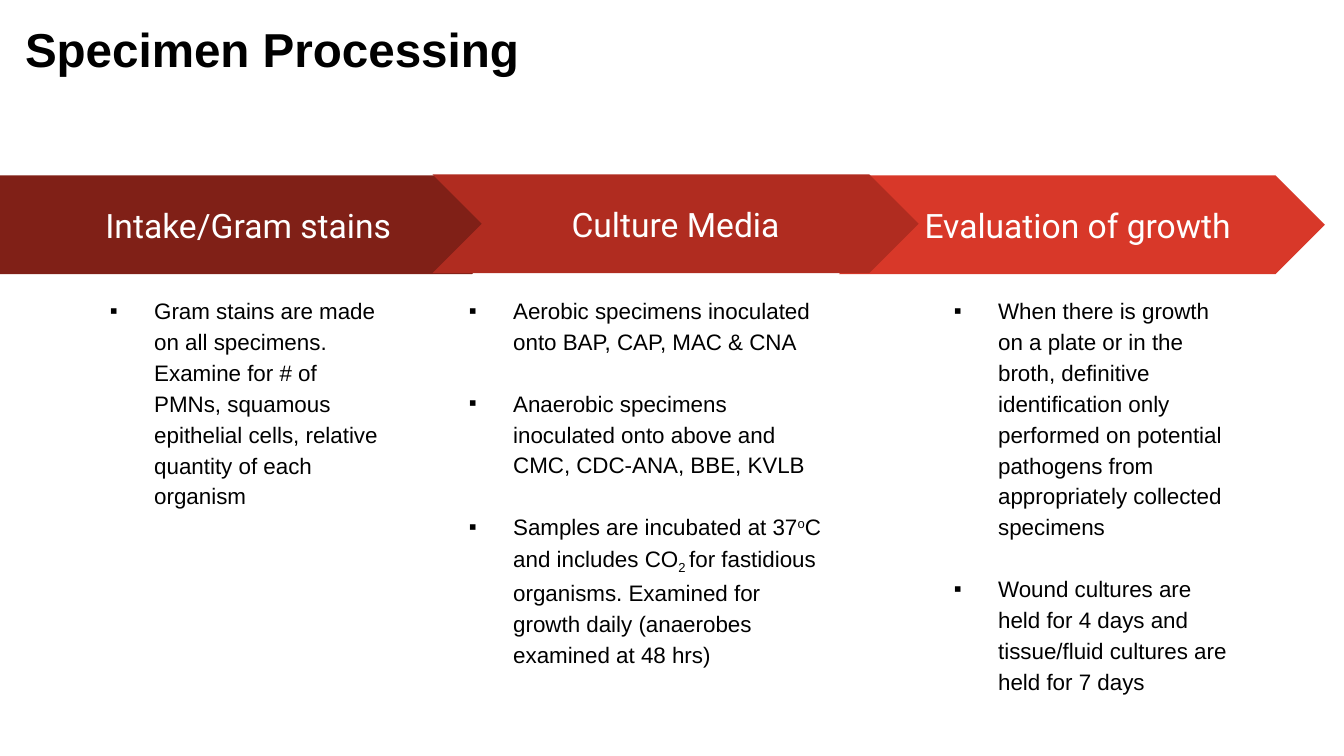
from dataclasses import dataclass

from lxml.etree import SubElement
from pptx import Presentation
from pptx.dml.color import RGBColor
from pptx.enum.shapes import MSO_SHAPE
from pptx.enum.text import MSO_ANCHOR, PP_ALIGN
from pptx.oxml.ns import qn
from pptx.util import Pt

EMU_PER_PX = 9144  # 100 px to the inch


@dataclass(frozen=True)
class Theme:
    ink: RGBColor = RGBColor(0, 0, 0)
    white: RGBColor = RGBColor(255, 255, 255)
    dark_red: RGBColor = RGBColor(0x80, 0x20, 0x17)
    mid_red: RGBColor = RGBColor(0xB0, 0x2C, 0x20)
    bright_red: RGBColor = RGBColor(0xD8, 0x38, 0x29)
    body_font: str = "Arial"
    step_font: str = "Roboto"
    title_size: int = 34
    step_size: int = 24
    body_size: int = 16
    bullet_gap: int = 22


THEME = Theme()
SUPERSCRIPT, SUBSCRIPT = 30000, -25000
STEP_HEIGHT = 98
NOTES_TOP, NOTES_HEIGHT = 278, 381
STEP_INSET, TITLE_INSET = 13, 10

INTAKE_NOTES = [
    [("Gram stains are made on all specimens. Examine for # of PMNs, squamous "
      "epithelial cells, relative quantity of each organism", 0)],
]
CULTURE_NOTES = [
    [("Aerobic specimens inoculated onto BAP, CAP, MAC & CNA", 0)],
    [("Anaerobic specimens inoculated onto above and CMC, CDC-ANA, BBE, KVLB", 0)],
    [("Samples are incubated at 37", 0), ("o", SUPERSCRIPT),
     ("C and includes CO", 0), ("2 ", SUBSCRIPT),
     ("for fastidious organisms. Examined for growth daily "
      "(anaerobes examined at 48 hrs)", 0)],
]
GROWTH_NOTES = [
    [("When there is growth on a plate or in the broth, definitive identification "
      "only performed on potential pathogens from appropriately collected specimens", 0)],
    [("Wound cultures are held for 4 days and tissue/fluid cultures are held "
      "for 7 days", 0)],
]


def px(length):
    return length * EMU_PER_PX


def set_font(para, name, size, color, bold=False):
    para.font.name = name
    para.font.size = Pt(size)
    para.font.color.rgb = color
    para.font.bold = bold


def prepare_frame(shape, inset):
    """Wrap the text and give all four sides the same inset."""
    frame = shape.text_frame
    frame.word_wrap = True
    frame.margin_left = frame.margin_top = px(inset)
    frame.margin_right = frame.margin_bottom = px(inset)
    return frame


def add_box(page, left, top, width, height, inset):
    box = page.shapes.add_textbox(px(left), px(top), px(width), px(height))
    return prepare_frame(box, inset)


def add_title(page, text):
    para = add_box(page, 15, 16, 1150, 76, TITLE_INSET).paragraphs[0]
    para.text = text
    para.line_spacing = 0.9
    set_font(para, THEME.body_font, THEME.title_size, THEME.ink, bold=True)


def add_step(page, kind, left, top, width, color, text):
    arrow = page.shapes.add_shape(kind, px(left), px(top), px(width), px(STEP_HEIGHT))
    arrow.shadow.inherit = False
    arrow.fill.solid()
    arrow.fill.fore_color.rgb = color
    arrow.line.fill.background()
    frame = prepare_frame(arrow, STEP_INSET)
    frame.vertical_anchor = MSO_ANCHOR.MIDDLE
    para = frame.paragraphs[0]
    para.text = text
    para.alignment = PP_ALIGN.CENTER
    set_font(para, THEME.step_font, THEME.step_size, THEME.white)


def add_bullet(para):
    properties = para._p.get_or_add_pPr()
    properties.set("marL", str(px(67)))
    properties.set("indent", str(px(-44)))
    SubElement(properties, qn("a:buFont")).set("typeface", THEME.body_font)
    SubElement(properties, qn("a:buChar")).set("char", "▪")


def add_notes(page, left, width, notes):
    """Add a bulleted column; each note is a list of (text, baseline) spans."""
    frame = add_box(page, left, NOTES_TOP, width, NOTES_HEIGHT, STEP_INSET)
    for index, spans in enumerate(notes):
        para = frame.add_paragraph() if index else frame.paragraphs[0]
        para.line_spacing = 1.15
        if index:
            para.space_before = Pt(THEME.bullet_gap)
        add_bullet(para)
        set_font(para, THEME.body_font, THEME.body_size, THEME.ink)
        for text, baseline in spans:
            span = para.add_run()
            span.text = text
            if baseline:
                span._r.get_or_add_rPr().set("baseline", str(baseline))


def main():
    deck = Presentation()
    deck.slide_width, deck.slide_height = px(1333), px(750)
    page = deck.slides.add_slide(deck.slide_layouts[6])

    # The culture step comes last because it overlaps both neighbours.
    add_step(page, MSO_SHAPE.CHEVRON, 832, 174, 482, THEME.bright_red,
             "Evaluation of growth ")
    add_notes(page, 910, 326, GROWTH_NOTES)
    add_step(page, MSO_SHAPE.PENTAGON, 0, 174, 517, THEME.dark_red,
             "Intake/Gram stains")
    add_notes(page, 73, 326, INTAKE_NOTES)
    add_step(page, MSO_SHAPE.CHEVRON, 429, 173, 482, THEME.mid_red, "Culture Media")
    add_notes(page, 429, 400, CULTURE_NOTES)
    add_title(page, "Specimen Processing")

    deck.save("out.pptx")


if __name__ == "__main__":
    main()
